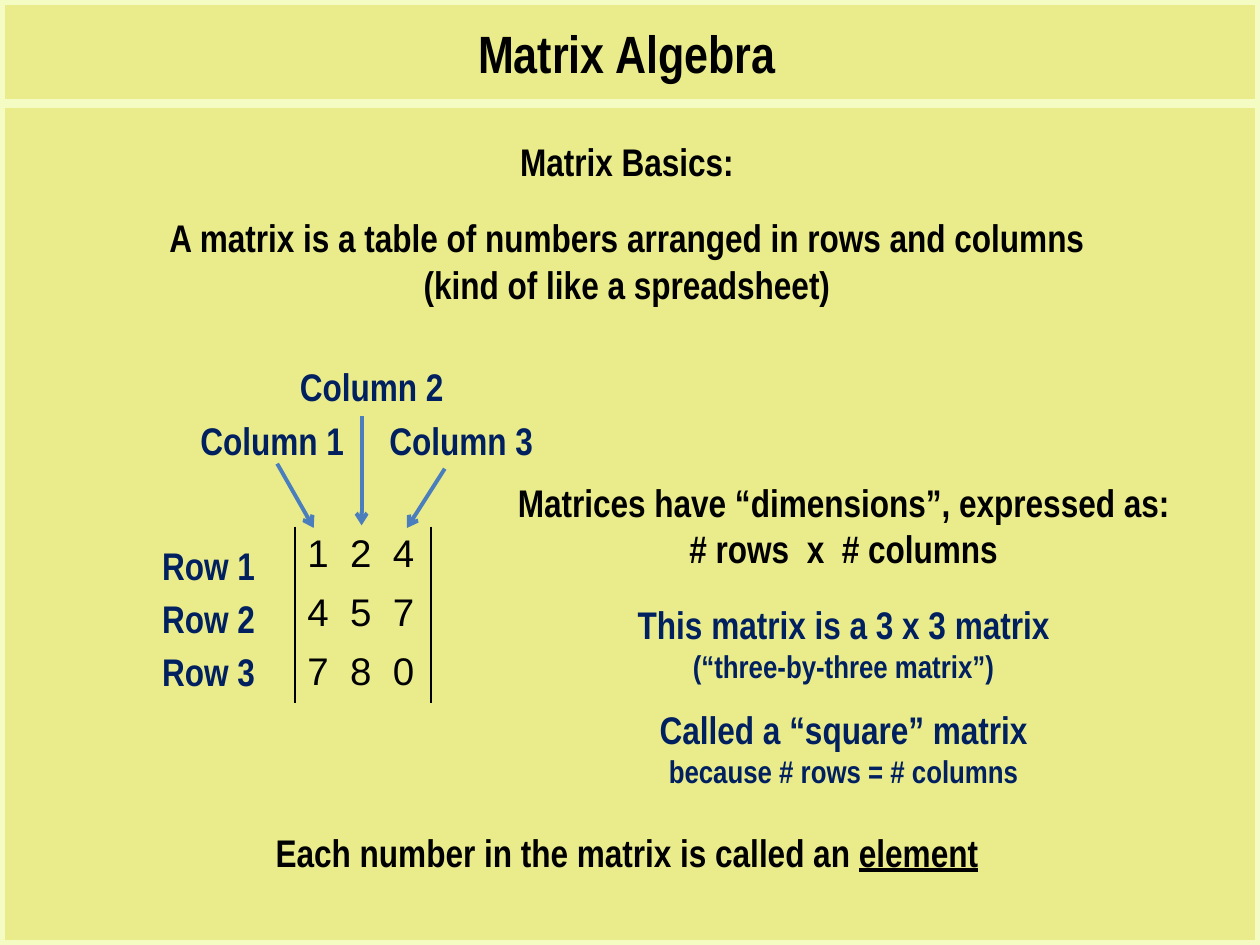
"""Build a slide that introduces matrices, their rows, columns and dimensions."""
from dataclasses import dataclass

from lxml import etree
from pptx import Presentation, util as u
from pptx.dml.color import RGBColor
from pptx.enum import shapes, text
from pptx.oxml import ns


@dataclass(frozen=True)
class Theme:
    background: str = "EAEC8C"
    frame: str = "F4FCC4"
    ink: str = "000000"
    navy: str = "002060"
    arrow: str = "4B7EBC"
    label_font: str = "Arial Narrow"
    number_font: str = "Arial"
    title: int = 30
    body: int = 22
    small: int = 18


THEME = Theme()
COLUMNS, ROWS = 100, 75
WIDTH, HEIGHT = u.Inches(10), u.Inches(7.5)

MATRIX = [(1, 2, 4), (4, 5, 7), (7, 8, 0)]
MATRIX_AREA = (23.4, 41.8, 10.8, 14)
DIVIDER_ROW = 8.2
LABEL_SIZE = (14.6, 4.7)
ROW_LABELS = {"left": 9.25, "top": 42.5, "step": 4.2}
COLUMN_LABELS = [
    ("Column 1", (14.3, 32.6), (22, 36.8), (24.9, 41.9)),
    ("Column 2", (22.2, 28.3), (28.7, 33), (28.7, 41.7)),
    ("Column 3", (29.3, 32.6), (35.3, 37.2), (32.3, 41.9)),
]

TITLE = ((7.4, 1.2, 84.7, 6.1), [("Matrix Algebra", THEME.title, THEME.ink, 0)])
BASICS = ((4.5, 10.5, 90.5, 16.3), [
    ("Matrix Basics:", THEME.body, THEME.ink, 0),
    ("A matrix is a table of numbers arranged in rows and columns", THEME.body, THEME.ink, 17),
    ("(kind of like a spreadsheet)", THEME.body, THEME.ink, 0),
])
DIMENSIONS = ((39.2, 37.5, 55.5, 26.8), [
    ("Matrices have “dimensions”, expressed as:", THEME.body, THEME.ink, 0),
    ("# rows  x  # columns", THEME.body, THEME.ink, 0),
    ("This matrix is a 3 x 3 matrix", THEME.body, THEME.navy, 17),
    ("(“three-by-three matrix”)", THEME.small, THEME.navy, 0),
    ("Called a “square” matrix", THEME.body, THEME.navy, 12),
    ("because # rows = # columns", THEME.small, THEME.navy, 0),
])
ELEMENT_AREA = (11.2, 65.3, 77.1, 4.7)
ELEMENT_SENTENCE = "Each number in the matrix is called an "
ELEMENT_TERM = "element"


def across(columns):
    return round(WIDTH * columns / COLUMNS)


def down(rows):
    return round(HEIGHT * rows / ROWS)


def place(area):
    left, top, width, height = area
    return across(left), down(top), across(width), down(height)


def style(paragraph, font_name, size, color, bold):
    font = paragraph.font
    font.name, font.size, font.bold = font_name, u.Pt(size), bold
    font.color.rgb = RGBColor.from_string(color)


def add_text(parent, area, lines):
    box = parent.add_textbox(*place(area))
    frame = box.text_frame
    frame.word_wrap = True
    frame.auto_size = text.MSO_AUTO_SIZE.SHAPE_TO_FIT_TEXT
    for index, (words, size, color, gap) in enumerate(lines):
        paragraph = frame.add_paragraph() if index else frame.paragraphs[0]
        paragraph.add_run().text = words
        paragraph.alignment = text.PP_ALIGN.CENTER
        if gap:
            paragraph.space_before = u.Pt(gap)
        style(paragraph, THEME.label_font, size, color, True)
    return frame


def add_line(parent, start, end, color, weight, arrow=False):
    line = parent.add_connector(
        shapes.MSO_CONNECTOR.STRAIGHT,
        across(start[0]), down(start[1]), across(end[0]), down(end[1]))
    line.line.color.rgb = RGBColor.from_string(color)
    line.line.width = u.Pt(weight)
    if arrow:
        etree.SubElement(line.line._get_or_add_ln(), ns.qn("a:tailEnd"), type="arrow")
    etree.SubElement(line._element.spPr, ns.qn("a:effectLst"))


def set_borders(cell):
    properties = cell._tc.get_or_add_tcPr()
    for position, side in enumerate("LRTB"):
        border = etree.Element(ns.qn(f"a:ln{side}"), w=str(u.Pt(1)))
        if side in "LR":
            fill = etree.SubElement(border, ns.qn("a:solidFill"))
            etree.SubElement(fill, ns.qn("a:srgbClr"), val=THEME.ink)
        else:
            etree.SubElement(border, ns.qn("a:noFill"))
        properties.insert(position, border)


def add_frame(parent):
    add_line(parent, (0, DIVIDER_ROW), (COLUMNS, DIVIDER_ROW), THEME.frame, 5)
    frame = parent.add_shape(shapes.MSO_SHAPE.RECTANGLE, 0, 0, WIDTH, HEIGHT)
    frame.shadow.inherit = False
    frame.fill.background()
    frame.line.color.rgb = RGBColor.from_string(THEME.frame)
    frame.line.width = u.Pt(6)


def add_matrix(parent):
    table = parent.add_table(len(MATRIX), 1, *place(MATRIX_AREA)).table
    table.first_row = table.horz_banding = False
    for index, numbers in enumerate(MATRIX):
        cell = table.cell(index, 0)
        cell.text = "  ".join(map(str, numbers))
        cell.fill.background()
        set_borders(cell)
        style(cell.text_frame.paragraphs[0], THEME.number_font, THEME.body, THEME.ink, False)


def add_labels(parent):
    row_group = parent.add_group_shape().shapes
    for index in range(len(MATRIX)):
        top = ROW_LABELS["top"] + index * ROW_LABELS["step"]
        add_text(row_group, (ROW_LABELS["left"], top, *LABEL_SIZE),
                 [(f"Row {index + 1}", THEME.body, THEME.navy, 0)])
    column_group = parent.add_group_shape().shapes
    for label, corner, start, end in COLUMN_LABELS:
        add_text(column_group, (*corner, *LABEL_SIZE), [(label, THEME.body, THEME.navy, 0)])
        add_line(column_group, start, end, THEME.arrow, 2.25, arrow=True)


def main():
    deck = Presentation()
    deck.slide_width, deck.slide_height = WIDTH, HEIGHT
    slide = deck.slides.add_slide(deck.slide_layouts[6])
    slide.background.fill.solid()
    slide.background.fill.fore_color.rgb = RGBColor.from_string(THEME.background)
    canvas = slide.shapes
    add_frame(canvas)
    add_text(canvas, *TITLE)
    add_matrix(canvas)
    add_text(canvas, *BASICS)
    add_labels(canvas)
    add_text(canvas, *DIMENSIONS)
    sentence = add_text(canvas, ELEMENT_AREA, [(ELEMENT_SENTENCE, THEME.body, THEME.ink, 0)])
    term = sentence.paragraphs[0].add_run()
    term.text = ELEMENT_TERM
    term.font.underline = True
    deck.save("out.pptx")


if __name__ == "__main__":
    main()
